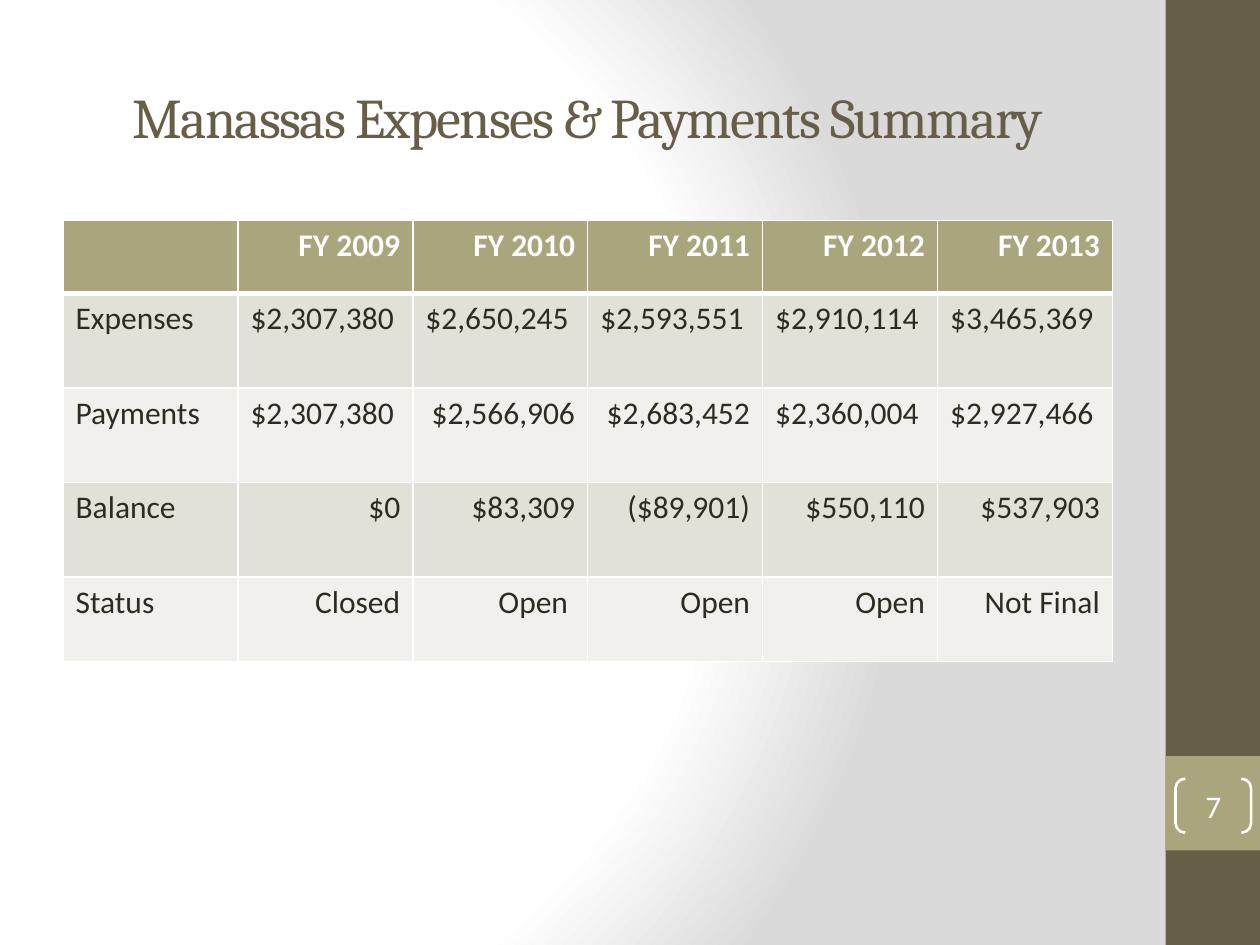
import pptx
import pptx.dml.color
import pptx.enum.shapes
import pptx.enum.text
import pptx.oxml
import pptx.oxml.ns
import pptx.util
from pptx.util import Inches

RGBColor = pptx.dml.color.RGBColor
ALIGN = pptx.enum.text.PP_ALIGN
MIDDLE = pptx.enum.text.MSO_ANCHOR.MIDDLE
SHAPE = pptx.enum.shapes.MSO_SHAPE

BROWN = RGBColor(0x67, 0x5E, 0x47)
OLIVE = RGBColor(0xA9, 0xA5, 0x7C)
WHITE = RGBColor(0xFF, 0xFF, 0xFF)
INK = RGBColor(0x2F, 0x2B, 0x20)
BANDS = [RGBColor(0xE2, 0xE1, 0xD7), RGBColor(0xF1, 0xF0, 0xEC)]
GRAY = RGBColor(0xDA, 0xDA, 0xDA)

TITLE = "Manassas Expenses & Payments Summary"
PAGE_NUMBER = "7"
# Each row: height in inches, alignment of each cell (l or r), texts
ROWS = [
    (0.58, "lrrrrr", ["", "FY 2009", "FY 2010", "FY 2011", "FY 2012", "FY 2013"]),
    (0.75, "llllll", ["Expenses", "$2,307,380", "$2,650,245", "$2,593,551", "$2,910,114", "$3,465,369"]),
    (0.75, "llrrll", ["Payments", "$2,307,380", "$2,566,906", "$2,683,452", "$2,360,004", "$2,927,466"]),
    (0.75, "lrrrrr", ["Balance", "$0", "$83,309", "($89,901)", "$550,110", "$537,903"]),
    (0.67, "lrrrrr", ["Status", "Closed", "Open ", "Open", "Open", "Not Final"]),
]
ALIGNMENTS = {"l": ALIGN.LEFT, "r": ALIGN.RIGHT}
BACKGROUND_STOPS = [(0, WHITE), (75, WHITE), (100, GRAY)]


def set_background(slide):
    slide.background.fill.solid()
    solid = slide.element.find(".//" + pptx.oxml.ns.qn("p:bgPr"))[0]
    stops = "".join(
        f'<a:gs pos="{position * 1000}"><a:srgbClr val="{color}"/></a:gs>'
        for position, color in BACKGROUND_STOPS)
    gradient = pptx.oxml.parse_xml(
        f'<a:gradFill {pptx.oxml.ns.nsdecls("a")} rotWithShape="1"><a:gsLst>{stops}</a:gsLst>'
        '<a:path path="circle"><a:fillToRect l="20000" t="50000" r="100000" b="50000"/>'
        '</a:path></a:gradFill>')
    solid.getparent().replace(solid, gradient)


def add_text(frame, text, alignment, size, font, color, bold=False):
    paragraph = frame.paragraphs[0]
    paragraph.alignment = alignment
    run = paragraph.add_run()
    run.text = text
    run.font.size = pptx.util.Pt(size)
    run.font.name = font
    run.font.bold = bold
    run.font.color.rgb = color
    return run


def add_block(slide, top, height, color):
    block = slide.shapes.add_shape(
        SHAPE.RECTANGLE, Inches(9.25), Inches(top), Inches(0.75), Inches(height))
    block.shadow.inherit = False
    block.fill.solid()
    block.fill.fore_color.rgb = color
    block.line.fill.background()


def set_borders(cell, widths):
    """Draw white borders; widths are points for left, right, top, bottom."""
    properties = cell._tc.get_or_add_tcPr()
    for side, width in zip("LRTB", widths):
        properties.append(pptx.oxml.parse_xml(
            f'<a:ln{side} {pptx.oxml.ns.nsdecls("a")} w="{pptx.util.Pt(width)}">'
            f'<a:solidFill><a:srgbClr val="{WHITE}"/></a:solidFill></a:ln{side}>'))


def add_summary_table(slide):
    total_height = sum(height for height, _, _ in ROWS)
    table = slide.shapes.add_table(
        len(ROWS), len(ROWS[0][2]), Inches(0.5), Inches(1.75),
        Inches(8.33), Inches(total_height)).table
    for column in table.columns:
        column.width = Inches(8.33 / len(table.columns))
    for row_index, (height, alignments, texts) in enumerate(ROWS):
        table.rows[row_index].height = Inches(height)
        header = row_index == 0
        for column_index, (alignment, text) in enumerate(zip(alignments, texts)):
            cell = table.cell(row_index, column_index)
            set_borders(cell, (1, 1, 3 if row_index == 1 else 1, 3 if header else 1))
            cell.fill.solid()
            cell.fill.fore_color.rgb = OLIVE if header else BANDS[(row_index - 1) % 2]
            if text:
                add_text(cell.text_frame, text, ALIGNMENTS[alignment], 18, "Calibri",
                         WHITE if header else INK, header)


def add_title(slide):
    frame = slide.shapes.add_textbox(
        Inches(0.5), Inches(0.3), Inches(8.33), Inches(1.25)).text_frame
    frame.word_wrap = True
    frame.vertical_anchor = MIDDLE
    run = add_text(frame, TITLE, ALIGN.CENTER, 32, "Cambria", BROWN)
    run.font._element.set("spc", "-100")


def add_page_number(slide):
    bracket = slide.shapes.add_shape(
        SHAPE.DOUBLE_BRACKET, Inches(9.33), Inches(6.18), Inches(0.6), Inches(0.43))
    bracket.adjustments[0] = 0.18
    bracket.shadow.inherit = False
    bracket.fill.background()
    bracket.line.color.rgb = WHITE
    bracket.line.width = pptx.util.Pt(1.5)
    frame = bracket.text_frame
    frame.margin_left = frame.margin_right = frame.margin_top = frame.margin_bottom = 0
    frame.vertical_anchor = MIDDLE
    add_text(frame, PAGE_NUMBER, ALIGN.CENTER, 18, "Calibri", WHITE)


def main():
    presentation = pptx.Presentation()
    presentation.slide_width = Inches(10)
    presentation.slide_height = Inches(7.5)
    slide = presentation.slides.add_slide(presentation.slide_layouts[6])
    set_background(slide)
    add_block(slide, 0, 7.5, BROWN)
    add_block(slide, 6, 0.75, OLIVE)
    add_title(slide)
    add_summary_table(slide)
    add_page_number(slide)
    presentation.save("out.pptx")


if __name__ == "__main__":
    main()
